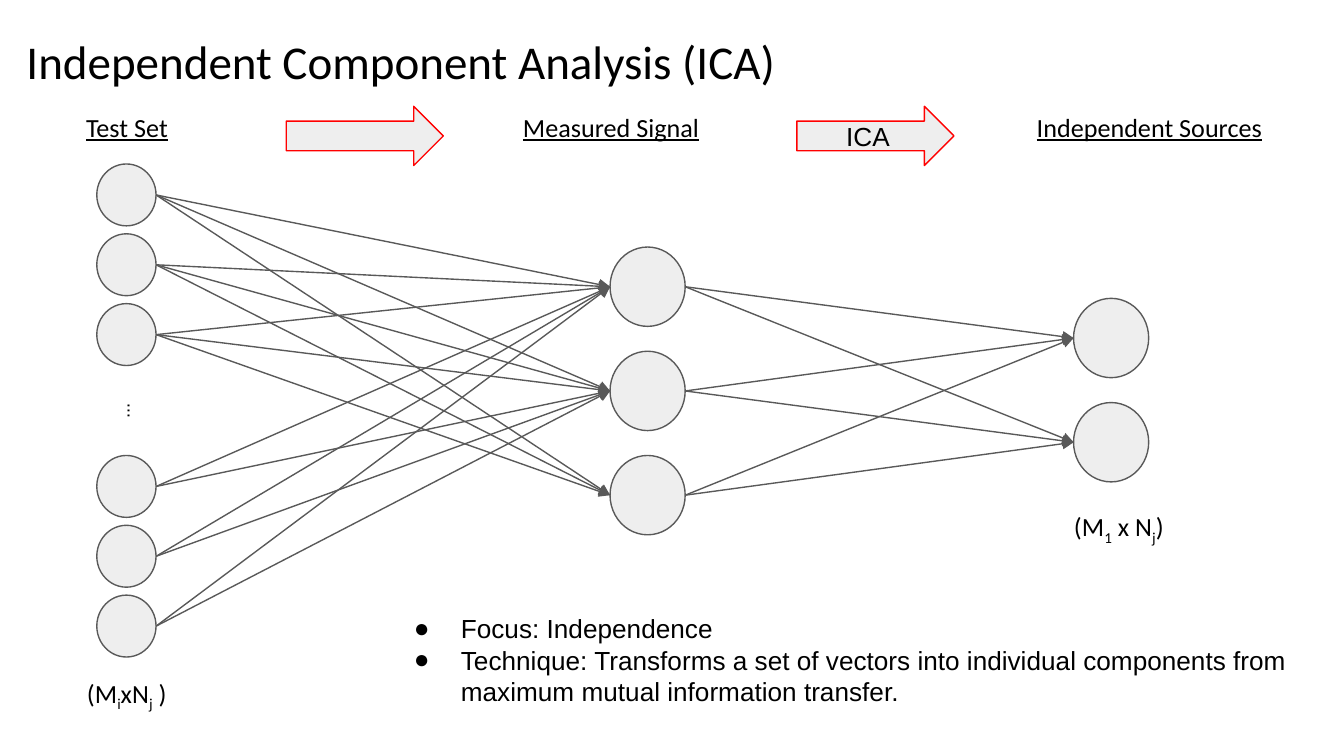
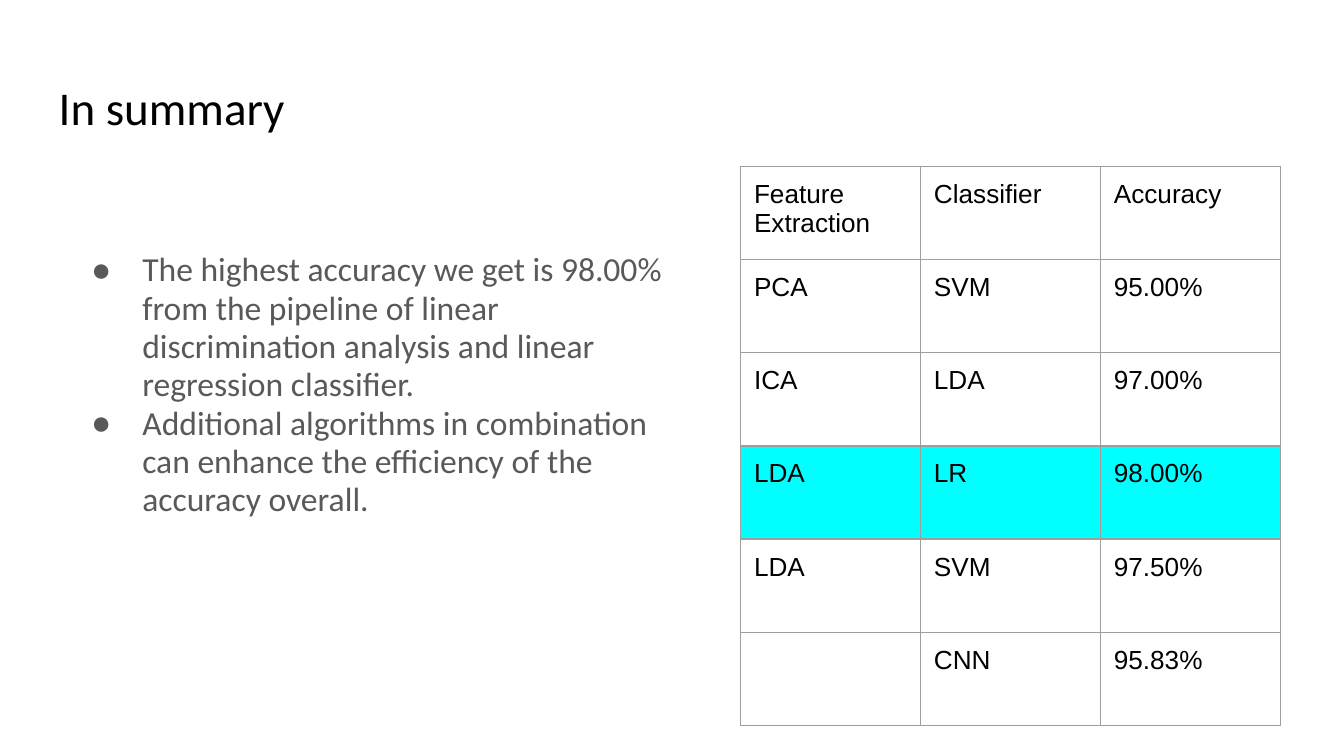
from itertools import product
from typing import NamedTuple

from lxml import etree
from pptx import Presentation
from pptx.dml.color import RGBColor
from pptx.enum import shapes, text
from pptx.oxml import ns
from pptx.util import Cm, Pt

BLACK = RGBColor(0x00, 0x00, 0x00)
GRAY = RGBColor(0x59, 0x59, 0x59)
PALE = RGBColor(0xEE, 0xEE, 0xEE)
RED = RGBColor(0xFF, 0x00, 0x00)
CYAN = RGBColor(0x00, 0xFF, 0xFF)
BORDER = RGBColor(0x9E, 0x9E, 0x9E)
HEAD_FONT, PLAIN_FONT = "Calibri", "Arial"
INSET = Cm(0.25)
LINE_WIDTH = Pt(0.75)


class Box(NamedTuple):
    """A rectangle in centimetres."""
    left: float
    top: float
    width: float
    height: float

    def emu(self) -> tuple:
        return tuple(Cm(v) for v in self)

    @property
    def middle(self) -> float:
        return self.top + self.height / 2


class Style(NamedTuple):
    font: str
    size: float
    color: RGBColor = BLACK
    underline: bool = False


class Label(NamedTuple):
    """Text whose every second piece is a subscript."""
    pieces: tuple
    box: Box
    style: Style
    rotation: int = 0


class Bullets(NamedTuple):
    items: tuple
    box: Box
    style: Style
    hang: float
    spacing: float


TITLE = Style(HEAD_FONT, 25.2)
HEADING = Style(HEAD_FONT, 14, underline=True)
DIMENSION = Style(HEAD_FONT, 14)
PLAIN = Style(PLAIN_FONT, 14)
DOTS = Style(PLAIN_FONT, 10)

LABELS = (
    Label(("Test Set",), Box(0.38, 1.85, 4.04, 1.12), HEADING),
    Label(("Measured Signal",), Box(9.53, 1.85, 4.04, 1.12), HEADING),
    Label(("Independent Sources",), Box(18.64, 1.85, 6.17, 1.12), HEADING),
    Label(("(M", "i", "xN", "j", " )"), Box(0.91, 12.55, 2.97, 1.12), DIMENSION),
    Label(("(M", "1", " x N", "j", ")"), Box(19.66, 9.4, 2.97, 1.12), DIMENSION),
    Label(("...",), Box(1.9, 7.29, 0.84, 0.94), DOTS, 270),
)
ARROWS = (("", Box(5.41, 2.01, 2.97, 1.12)), ("ICA", Box(15.06, 2.01, 2.97, 1.12)))

ICA_POINTS = Bullets(
    ("Focus: Independence",
     "Technique: Transforms a set of vectors into individual components from "
     "maximum mutual information transfer."),
    Box(7.19, 11.33, 17.63, 2.31), PLAIN, 0.89, 1.0)
SUMMARY_POINTS = Bullets(
    ("The highest accuracy we get is 98.00% from the pipeline of linear "
     "discrimination analysis and linear regression classifier.",
     "Additional algorithms in combination can enhance the efficiency of the "
     "accuracy overall."),
    Box(1.17, 4.5, 11.86, 5.69), Style(HEAD_FONT, 18, GRAY), 0.97, 0.95)

RESULTS = (
    ("Feature Extraction", "Classifier", "Accuracy"),
    ("PCA", "SVM", "95.00%"),
    ("ICA", "LDA", "97.00%"),
    ("LDA", "LR", "98.00%"),
    ("LDA", "SVM", "97.50%"),
    ("", "CNN", "95.83%"),
)
BEST_ROW = 3
TABLE_LEFT, TABLE_TOP, COL_WIDTH, ROW_HEIGHT = 14.0, 3.15, 3.4, 1.76


def style_runs(p, style: Style) -> None:
    for r in p.runs:
        r.font.name, r.font.size = style.font, Pt(style.size)
        r.font.color.rgb = style.color
        if style.underline:
            r.font.underline = True


def prepare_frame(tf, anchor=text.MSO_ANCHOR.TOP) -> None:
    tf.auto_size = text.MSO_AUTO_SIZE.NONE
    tf.word_wrap = True
    tf.vertical_anchor = anchor
    tf.margin_left = tf.margin_right = tf.margin_top = tf.margin_bottom = INSET


def place(sp, box: Box) -> None:
    sp.left, sp.top, sp.width, sp.height = box.emu()


def add_slide(prs, title: str, left: float, top: float, bullets: Bullets):
    """Add a slide with its title and bulleted list."""
    slide = prs.slides.add_slide(prs.slide_layouts[1])
    sp = slide.shapes.title
    place(sp, Box(left, top, 23.67, 1.6))
    prepare_frame(sp.text_frame)
    sp.text_frame.text = title
    p = sp.text_frame.paragraphs[0]
    p.alignment = text.PP_ALIGN.LEFT
    style_runs(p, TITLE)

    body = slide.placeholders[1]
    place(body, bullets.box)
    tf = body.text_frame
    prepare_frame(tf)
    tf.text = "\n".join(bullets.items)
    for p in tf.paragraphs:
        p.space_before = Pt(0)
        p.line_spacing = bullets.spacing
        style_runs(p, bullets.style)
        props = p._p.get_or_add_pPr()
        props.set("marL", str(Cm(1.27)))
        props.set("indent", str(-Cm(bullets.hang)))
        color = etree.SubElement(props, ns.qn("a:buClr"))
        etree.SubElement(color, ns.qn("a:srgbClr"), val=str(bullets.style.color))
        etree.SubElement(props, ns.qn("a:buChar"), char="●")
    return slide


def add_label(slide, label: Label) -> None:
    sp = slide.shapes.add_textbox(*label.box.emu())
    sp.rotation = label.rotation
    prepare_frame(sp.text_frame)
    p = sp.text_frame.paragraphs[0]
    p.alignment = text.PP_ALIGN.CENTER
    for i, piece in enumerate(label.pieces):
        r = p.add_run()
        r.text = piece
        if i % 2:
            r._r.get_or_add_rPr().set("baseline", "-25000")
    style_runs(p, label.style)


def add_pale_shape(slide, kind, box: Box, outline: RGBColor):
    sp = slide.shapes.add_shape(kind, *box.emu())
    sp.shadow.inherit = False
    sp.fill.solid()
    sp.fill.fore_color.rgb = PALE
    sp.line.color.rgb = outline
    sp.line.width = LINE_WIDTH
    return sp


def add_block_arrow(slide, caption: str, box: Box) -> None:
    sp = add_pale_shape(slide, shapes.MSO_SHAPE.RIGHT_ARROW, box, RED)
    if caption:
        prepare_frame(sp.text_frame, text.MSO_ANCHOR.MIDDLE)
        sp.text_frame.text = caption
        p = sp.text_frame.paragraphs[0]
        p.alignment = text.PP_ALIGN.CENTER
        style_runs(p, PLAIN)


def node_column(first: Box, step: float, count: int) -> list[Box]:
    return [first._replace(top=first.top + i * step) for i in range(count)]


def link_nodes(slide, start: Box, end: Box) -> None:
    """Draw an arrow from the right of one node to the left of another."""
    cxn = slide.shapes.add_connector(
        shapes.MSO_CONNECTOR.STRAIGHT, Cm(start.left + start.width),
        Cm(start.middle), Cm(end.left), Cm(end.middle))
    cxn.line.color.rgb = GRAY
    cxn.line.width = LINE_WIDTH
    props = cxn._element.spPr
    etree.SubElement(props.find(ns.qn("a:ln")), ns.qn("a:tailEnd"), type="triangle")
    etree.SubElement(props, ns.qn("a:effectLst"))


def add_network(slide) -> None:
    upper = node_column(Box(1.83, 3.1, 1.12, 1.17), 1.32, 3)
    lower = node_column(Box(1.83, 8.61, 1.12, 1.17), 1.32, 3)
    measured = node_column(Box(11.53, 4.67, 1.42, 1.5), 1.97, 3)
    sources = node_column(Box(20.29, 5.64, 1.42, 1.5), 1.97, 2)
    for box in upper + lower + measured + sources:
        add_pale_shape(slide, shapes.MSO_SHAPE.FLOWCHART_CONNECTOR, box, GRAY)
    links = (*product(upper, measured), *product(lower, measured[:2]),
             *product(measured, sources))
    for start, end in links:
        link_nodes(slide, start, end)


def add_borders(cell) -> None:
    props = cell._tc.get_or_add_tcPr()
    for side in ("lnL", "lnR", "lnT", "lnB"):
        ln = etree.SubElement(props, ns.qn(f"a:{side}"), w=str(LINE_WIDTH))
        fill = etree.SubElement(ln, ns.qn("a:solidFill"))
        etree.SubElement(fill, ns.qn("a:srgbClr"), val=str(BORDER))


def add_results(slide) -> None:
    rows, cols = len(RESULTS), len(RESULTS[0])
    box = Box(TABLE_LEFT, TABLE_TOP, cols * COL_WIDTH, rows * ROW_HEIGHT)
    table = slide.shapes.add_table(rows, cols, *box.emu()).table
    table.first_row = table.horz_banding = False
    for col in table.columns:
        col.width = Cm(COL_WIDTH)
    for i, values in enumerate(RESULTS):
        table.rows[i].height = Cm(ROW_HEIGHT)
        for j, value in enumerate(values):
            cell = table.cell(i, j)
            cell.margin_left = cell.margin_right = INSET
            cell.margin_top = cell.margin_bottom = INSET
            add_borders(cell)
            if i == BEST_ROW:
                cell.fill.solid()
                cell.fill.fore_color.rgb = CYAN
            else:
                cell.fill.background()
            cell.text_frame.text = value
            style_runs(cell.text_frame.paragraphs[0], PLAIN)


def main() -> None:
    prs = Presentation()
    prs.slide_width, prs.slide_height = Cm(25.4), Cm(14.29)

    ica = add_slide(prs, "Independent Component Analysis (ICA)", 0.25, 0.36, ICA_POINTS)
    for label in LABELS:
        add_label(ica, label)
    for caption, box in ARROWS:
        add_block_arrow(ica, caption, box)
    add_network(ica)

    summary = add_slide(prs, "In summary", 0.86, 1.24, SUMMARY_POINTS)
    add_results(summary)
    prs.save("out.pptx")


if __name__ == "__main__":
    main()
